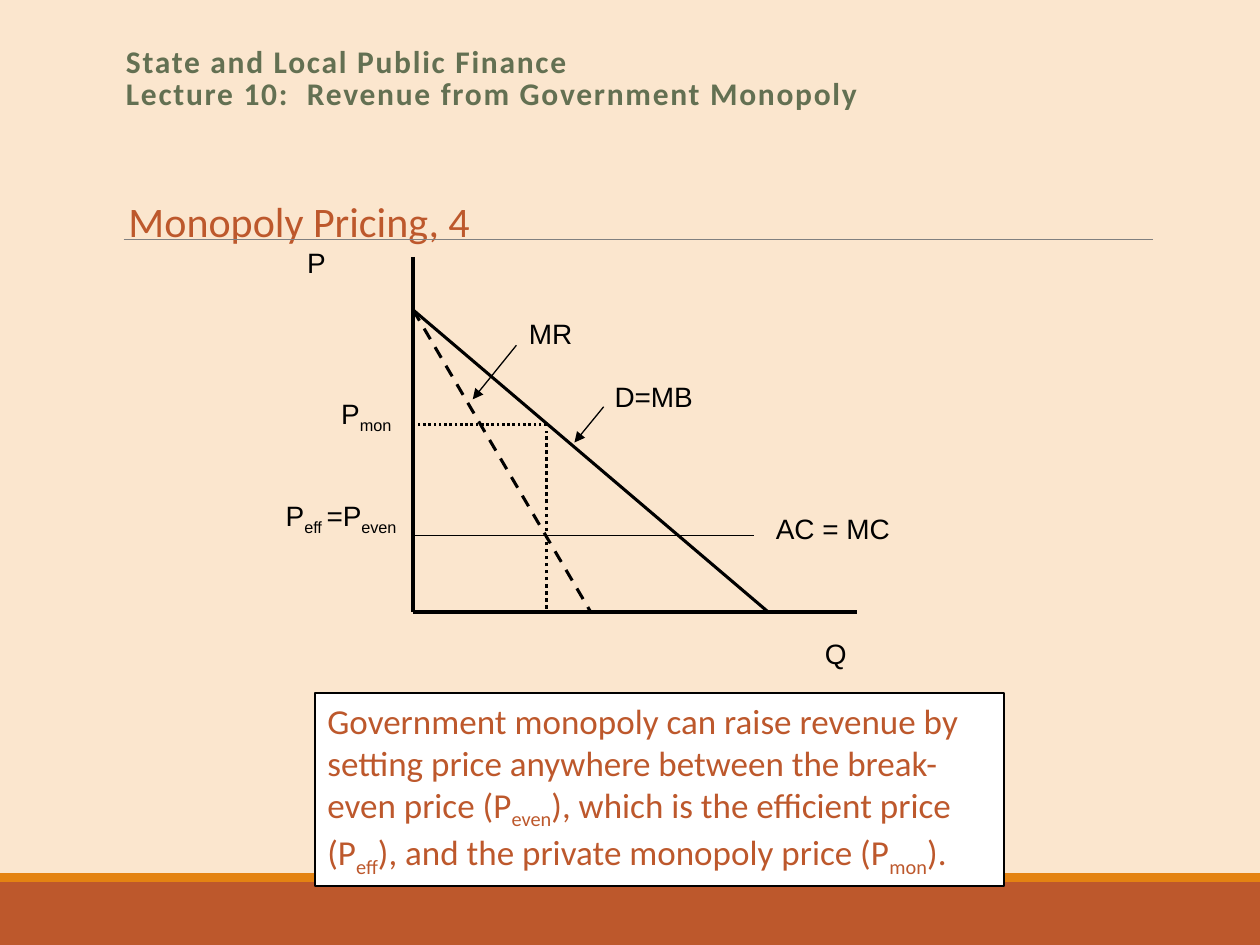
import pptx
import pptx.util
import pptx.dml.color
import pptx.enum.dml
import pptx.enum.shapes
import pptx.enum.text
import pptx.oxml.ns
import lxml.etree
from dataclasses import dataclass

Cm, Pt = pptx.util.Cm, pptx.util.Pt
DASH = pptx.enum.dml.MSO_LINE
RECTANGLE = pptx.enum.shapes.MSO_SHAPE.RECTANGLE
STRAIGHT = pptx.enum.shapes.MSO_CONNECTOR.STRAIGHT
TOP = pptx.enum.text.MSO_ANCHOR.TOP
LEFT = pptx.enum.text.PP_ALIGN.LEFT


def color(code):
    return pptx.dml.color.RGBColor.from_string(code)


@dataclass(frozen=True)
class Theme:
    cream = color("FBE6CE")
    rust = color("BD582C")
    orange = color("E48312")
    gray = color("808080")
    green = color("637052")
    black = color("000000")
    white = color("FFFFFF")
    text_font = "Calibri"
    label_font = "Arial"
    title_size = Pt(24)
    note_size = Pt(20)
    header_size = Pt(18)
    label_size = Pt(16)


theme = Theme()


def write(para, text, font, size, ink):
    """Add runs to a paragraph; every second part between bars is a subscript."""
    para.alignment = LEFT
    for index, part in enumerate(text.split("|")):
        if part:
            span = para.add_run()
            span.text = part
            span.font.name, span.font.size = font, size
            span.font.color.rgb = ink
            if index % 2:
                span._r.get_or_add_rPr().set("baseline", "-25000")


def draw_line(shapes, start, end, width, ink=theme.black, dash=None, arrow=False):
    line = shapes.add_connector(STRAIGHT, *map(Cm, start + end))
    line.line.width = Pt(width)
    line.line.color.rgb = ink
    if dash:
        line.line.dash_style = dash
    if arrow:
        lxml.etree.SubElement(line.line._get_or_add_ln(),
                              pptx.oxml.ns.qn("a:tailEnd"), type="triangle")
    lxml.etree.SubElement(line._element.spPr, pptx.oxml.ns.qn("a:effectLst"))


deck = pptx.Presentation()
deck.slide_width, deck.slide_height = Cm(25.4), Cm(19.05)
page = deck.slides.add_slide(deck.slide_layouts[5])
page.background.fill.solid()
page.background.fill.fore_color.rgb = theme.cream

# Footer bands and rule under the title
for top, height, fill in [(17.78, 1.27, theme.rust), (17.6, 0.18, theme.orange)]:
    band = page.shapes.add_shape(RECTANGLE, 0, Cm(top), deck.slide_width, Cm(height))
    band.shadow.inherit = False
    band.fill.solid()
    band.fill.fore_color.rgb = fill
    band.line.fill.background()
draw_line(page.shapes, (2.49, 4.83), (23.24, 4.83), 0.5, theme.gray)

# Title
title = page.shapes.title
title.left, title.top, title.width, title.height = Cm(2.59), Cm(4.01), Cm(12.85), Cm(1.12)
frame = title.text_frame
frame.margin_left = frame.margin_right = 0
frame.vertical_anchor = TOP
frame.auto_size = pptx.enum.text.MSO_AUTO_SIZE.NONE
para = frame.paragraphs[0]
para.line_spacing, para.space_before = 0.8, Pt(6.8)
write(para, "Monopoly Pricing, 4", theme.text_font, theme.title_size, theme.rust)

# Shared points of the diagram, in centimetres
axis_x, axis_y = 8.33, 12.34
demand_top, quantity_mon = 6.25, 11.02
price_mon, price_eff = 8.56, 10.8

# Axes, curves, guides and pointers
diagram = page.shapes.add_group_shape().shapes
origin, choke = (axis_x, axis_y), (axis_x, demand_top)
draw_line(diagram, (axis_x, 5.18), origin, 2)
draw_line(diagram, origin, (17.27, axis_y), 2)
draw_line(diagram, choke, (15.49, axis_y), 1.75)
draw_line(diagram, choke, (11.91, axis_y), 1.75, dash=DASH.DASH)
draw_line(diagram, (quantity_mon, 12.27), (quantity_mon, 8.69), 2, dash=DASH.ROUND_DOT)
draw_line(diagram, (quantity_mon, price_mon), (axis_x, price_mon), 1.5, dash=DASH.ROUND_DOT)
draw_line(diagram, (axis_x, price_eff), (15.19, price_eff), 0.75)
draw_line(diagram, (10.41, 6.96), (9.53, 8.05), 0.75, arrow=True)
draw_line(diagram, (12.17, 8.2), (11.58, 8.92), 0.75, arrow=True)

# Diagram labels
for text, left, top, width, height in [
    ("P", 5.94, 4.83, 0.89, 1.42),
    ("Q", 16.38, 12.7, 0.89, 1.42),
    ("AC = MC", 15.39, 10.19, 3.38, 1.07),
    ("MR", 10.41, 6.25, 2.08, 1.07),
    ("D=MB", 12.14, 7.52, 2.97, 1.07),
    ("P|eff |=P|even", 5.51, 9.93, 2.92, 2.41),
    ("P|mon", 6.63, 7.87, 2.39, 1.09),
]:
    box = diagram.add_textbox(Cm(left), Cm(top), Cm(width), Cm(height))
    box.text_frame.word_wrap = True
    write(box.text_frame.paragraphs[0], text, theme.label_font, theme.label_size, theme.black)

# Conclusion
note = diagram.add_shape(RECTANGLE, Cm(6.35), Cm(13.97), Cm(13.89), Cm(3.89))
note.shadow.inherit = False
note.fill.solid()
note.fill.fore_color.rgb = theme.white
note.line.color.rgb = theme.black
note.line.width = Pt(0.75)
note.text_frame.word_wrap = True
note.text_frame.vertical_anchor = TOP
write(note.text_frame.paragraphs[0],
      "Government monopoly can raise revenue by setting price anywhere between the "
      "break-even price (P|even|), which is the efficient price (P|eff|), and the "
      "private monopoly price (P|mon|).",
      theme.text_font, theme.note_size, theme.rust)

# Course header
header = page.shapes.add_textbox(Cm(2.29), Cm(0.84), Cm(20.96), Cm(1.65))
header.text_frame.word_wrap = True
para = header.text_frame.paragraphs[0]
para.line_spacing = 0.85
write(para, "State and Local Public Finance", theme.text_font, theme.header_size, theme.green)
para.add_line_break()
write(para, "Lecture 10:  Revenue from Government Monopoly",
      theme.text_font, theme.header_size, theme.green)
for span in para.runs:
    span.font.bold = True
    span._r.get_or_add_rPr().set("spc", "100")

deck.save("out.pptx")
